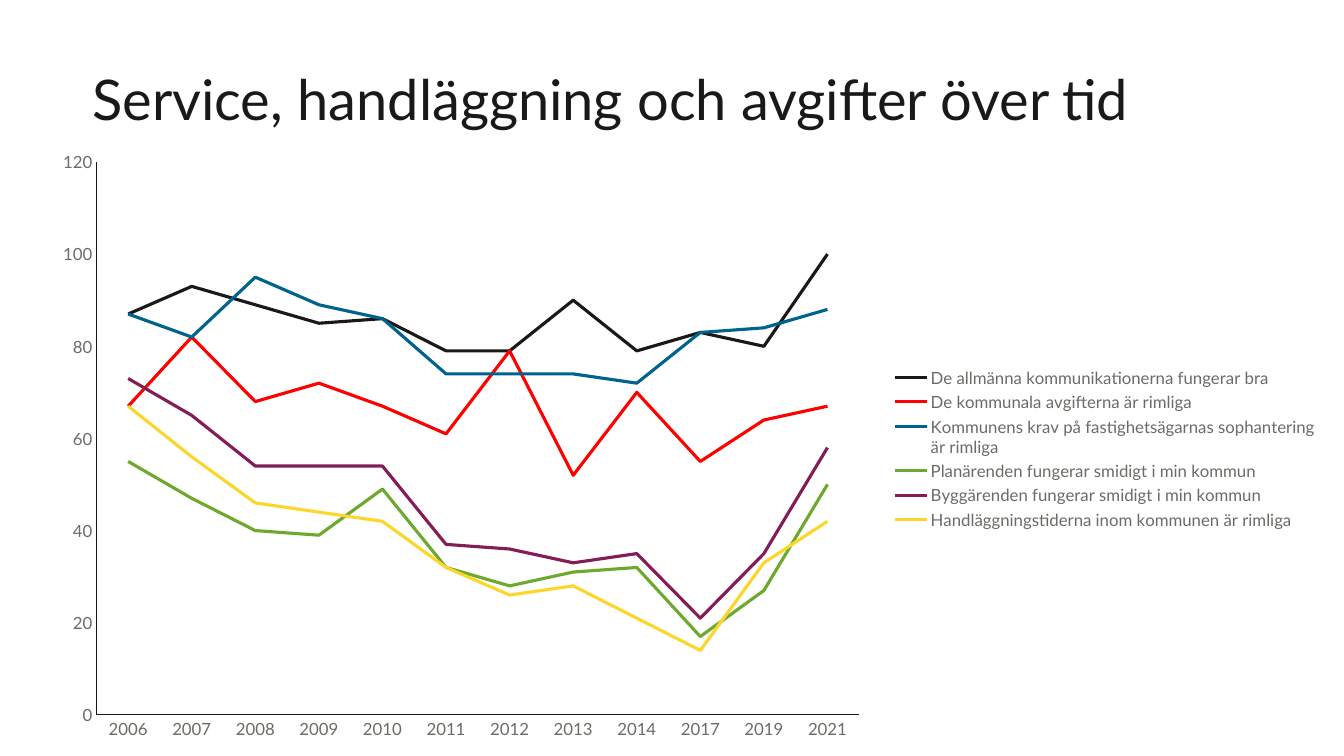
from dataclasses import dataclass

from lxml import etree
from pptx import Presentation
from pptx.chart.data import CategoryChartData
from pptx.dml.color import RGBColor
from pptx.enum import chart as kinds, text
from pptx.oxml import ns
from pptx.util import Pt


@dataclass(frozen=True)
class Theme:
    font: str = "Lato"
    ink: str = "1A1918"
    grey: str = "6E6A65"
    head: int = 40
    label: int = 12
    axis: float = 0.75
    line: float = 2.25


YEARS = ["2006", "2007", "2008", "2009", "2010", "2011",
         "2012", "2013", "2014", "2017", "2019", "2021"]

# Name, colour and yearly values of each line
SERIES = [
    ("De allmänna kommunikationerna fungerar bra", "1A1918",
     [87, 93, 89, 85, 86, 79, 79, 90, 79, 83, 80, 100]),
    ("De kommunala avgifterna är rimliga", "FF0000",
     [67, 82, 68, 72, 67, 61, 79, 52, 70, 55, 64, 67]),
    ("Kommunens krav på fastighetsägarnas sophantering är rimliga", "00638E",
     [87, 82, 95, 89, 86, 74, 74, 74, 72, 83, 84, 88]),
    ("Planärenden fungerar smidigt i min kommun", "6DA92F",
     [55, 47, 40, 39, 49, 32, 28, 31, 32, 17, 27, 50]),
    ("Byggärenden fungerar smidigt i min kommun", "841C56",
     [73, 65, 54, 54, 54, 37, 36, 33, 35, 21, 35, 58]),
    ("Handläggningstiderna inom kommunen är rimliga", "FCD62B",
     [67, 56, 46, 44, 42, 32, 26, 28, 21, 14, 33, 42]),
]


class Deck:
    def __init__(self, theme):
        self.theme = theme
        self.prs = Presentation()
        self.prs.slide_width, self.prs.slide_height = Pt(960), Pt(540)
        self.slide = self.prs.slides.add_slide(self.prs.slide_layouts[5])

    def style(self, font, size, color):
        font.name, font.size, font.bold = self.theme.font, Pt(size), False
        font.color.rgb = RGBColor.from_string(color)

    def stroke(self, line, color, width):
        line.color.rgb = RGBColor.from_string(color)
        line.width = Pt(width)

    def title(self, words, left, top, width, height):
        box = self.slide.shapes.title
        box.left, box.top = Pt(left), Pt(top)
        box.width, box.height = Pt(width), Pt(height)
        frame = box.text_frame
        frame.text = words
        frame.auto_size = text.MSO_AUTO_SIZE.NONE
        frame.word_wrap = True
        frame.vertical_anchor = text.MSO_ANCHOR.BOTTOM
        frame.margin_left = frame.margin_right = 0
        frame.margin_top = frame.margin_bottom = 0
        para = frame.paragraphs[0]
        para.alignment = text.PP_ALIGN.LEFT
        para.line_spacing = 0.8
        self.style(para.runs[0].font, self.theme.head, self.theme.ink)

    def place(self, part, after, inner, **spots):
        """Fix the layout of a chart part, in fractions of the chart."""
        for old in part.findall(ns.qn("c:layout")):
            part.remove(old)
        layout = etree.Element(ns.qn("c:layout"))
        manual = etree.SubElement(layout, ns.qn("c:manualLayout"))
        rules = {"layoutTarget": "inner"} if inner else {}
        rules.update(xMode="edge", yMode="edge", **spots)
        for tag, val in rules.items():
            etree.SubElement(manual, ns.qn("c:" + tag)).set("val", str(val))
        part.insert(after, layout)

    def axis(self, axis):
        axis.has_major_gridlines = False
        axis.major_tick_mark = kinds.XL_TICK_MARK.NONE
        axis.minor_tick_mark = kinds.XL_TICK_MARK.NONE
        self.style(axis.tick_labels.font, self.theme.label, self.theme.grey)
        self.stroke(axis.format.line, self.theme.ink, self.theme.axis)

    def lines(self, cats, series, left, top, width, height):
        data = CategoryChartData(number_format="0")
        data.categories = cats
        for name, _, vals in series:
            data.add_series(name, vals)
        chart = self.slide.shapes.add_chart(
            kinds.XL_CHART_TYPE.LINE, Pt(left), Pt(top), Pt(width),
            Pt(height), data).chart
        chart.has_title = False
        self.style(chart.font, 10, self.theme.ink)
        chart.plots[0].vary_by_categories = False
        for item, (_, color, _) in zip(chart.plots[0].series, series):
            item.smooth = False
            item.marker.style = kinds.XL_MARKER_STYLE.NONE
            self.stroke(item.format.line, color, self.theme.line)

        # Axes
        self.axis(chart.category_axis)
        scale = chart.value_axis
        self.axis(scale)
        scale.minimum_scale, scale.maximum_scale = 0, 120
        scale.major_unit = 20
        scale.tick_labels.number_format = "0"
        scale.tick_labels.number_format_is_linked = False

        # Legend and layout
        chart.has_legend = True
        key = chart.legend
        key.position = kinds.XL_LEGEND_POSITION.RIGHT
        key.include_in_layout = False
        self.style(key.font, self.theme.label, self.theme.grey)
        area = chart.plots[0]._element.getparent()
        self.place(area, 0, True, x=0.046, y=0.036, w=0.593, h=0.905)
        self.place(key._element, 1, False, x=0.66, y=0.365, w=0.34, h=0.28)


def main():
    deck = Deck(Theme())
    deck.title("Service, handläggning och avgifter över tid",
               66, 43, 828, 51)
    deck.lines(YEARS, SERIES, 26.6, 100, 919, 436.5)
    deck.prs.save("out.pptx")


if __name__ == "__main__":
    main()
